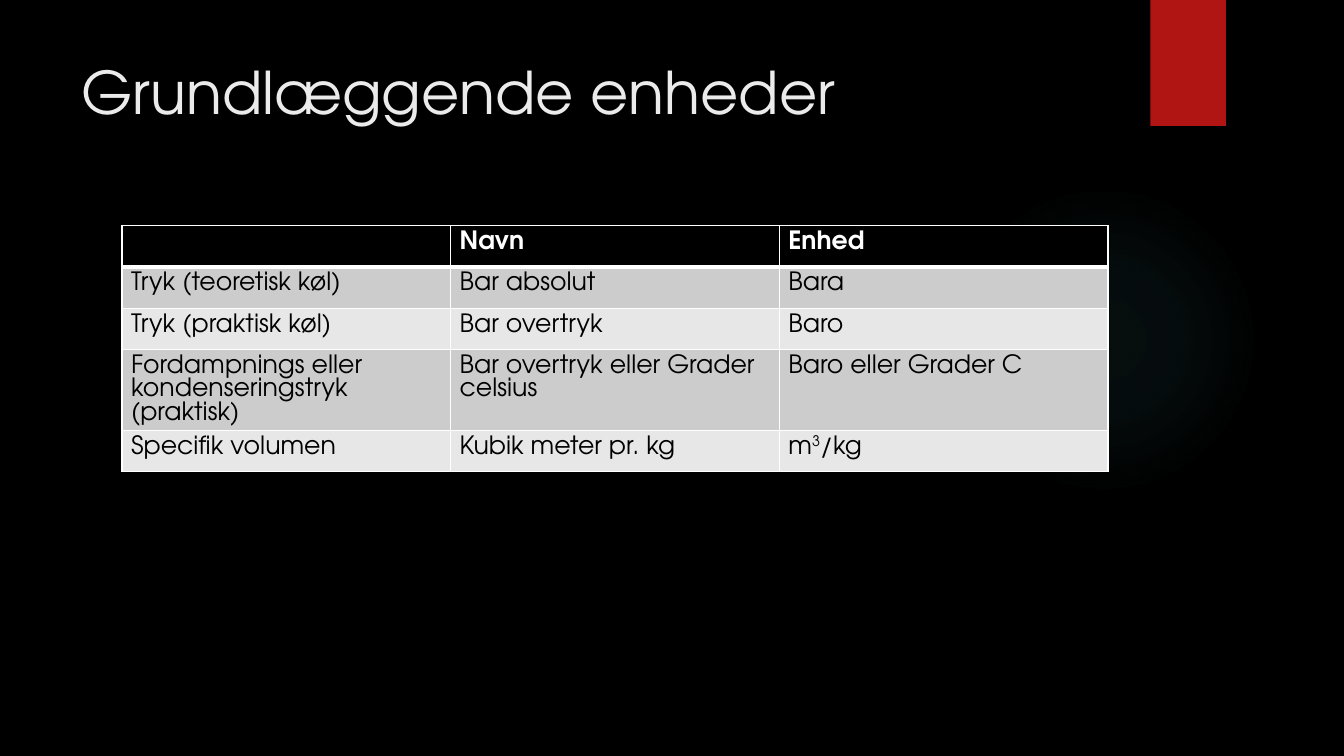
from lxml import etree
from pptx import Presentation, util as u
from pptx.dml.color import RGBColor
from pptx.enum import shapes, text
from pptx.oxml import ns, parse_xml

PX = 9144  # 100 px to the inch
FACE = "TeX Gyre Adventor"


def style(font, size, hue, bold=False):
    font.name, font.size, font.bold = FACE, u.Pt(size), bold
    font.color.rgb = RGBColor.from_string(hue)


def edge(cell, side, width):
    """Draw a white border, width in points, on one side (L, R, T or B)."""
    line = etree.SubElement(cell._tc.get_or_add_tcPr(), ns.qn(f"a:ln{side}"), w=str(u.Pt(width)))
    fill = etree.SubElement(line, ns.qn("a:solidFill"))
    etree.SubElement(fill, ns.qn("a:srgbClr"), val="FFFFFF")


deck = Presentation()
deck.slide_width, deck.slide_height = 1333 * PX, 750 * PX
slide = deck.slides.add_slide(deck.slide_layouts[5])
slide.background.fill.solid()
slide.background.fill.fore_color.rgb = RGBColor.from_string("000000")

title = slide.shapes.title
title.left, title.top, title.width, title.height = (n * PX for n in (71, 50, 1029, 153))
frame = title.text_frame
frame.text = "Grundlæggende enheder"
frame.vertical_anchor = text.MSO_ANCHOR.TOP
frame.paragraphs[0].alignment = text.PP_ALIGN.LEFT
style(frame.paragraphs[0].runs[0].font, 42, "EBEBEB")

glow = slide.shapes.add_shape(shapes.MSO_SHAPE.OVAL, *(n * PX for n in (941, 183, 308, 308)))
glow.shadow.inherit = False
glow.line.fill.background()
stops = "".join(
    f'<a:gs pos="{pos}000"><a:srgbClr val="50B9C1"><a:alpha val="{alpha}000"/></a:srgbClr></a:gs>'
    for pos, alpha in ((0, 7), (36, 6), (69, 0)))
glow._element.spPr.find(ns.qn("a:prstGeom")).addnext(parse_xml(
    f'<a:gradFill {ns.nsdecls("a")}><a:gsLst>{stops}</a:gsLst><a:path path="circle">'
    '<a:fillToRect l="50000" t="50000" r="50000" b="50000"/></a:path></a:gradFill>'))

flag = slide.shapes.add_shape(shapes.MSO_SHAPE.RECTANGLE, *(n * PX for n in (1141, 0, 75, 125)))
flag.shadow.inherit = False
flag.line.fill.background()
flag.fill.solid()
flag.fill.fore_color.rgb = RGBColor.from_string("B01513")

# Text between ^ marks is superscript
rows = [
    ("", "Navn", "Enhed"),
    ("Tryk (teoretisk køl)", "Bar absolut", "Bara"),
    ("Tryk (praktisk køl)", "Bar overtryk", "Baro"),
    ("Fordampnings eller kondenseringstryk (praktisk)", "Bar overtryk eller Grader celsius",
     "Baro eller Grader C"),
    ("Specifik volumen", "Kubik meter pr. kg", "m^3^/kg"),
]
table = slide.shapes.add_table(5, 3, *(n * PX for n in (121, 224, 978, 205))).table
for r, row in enumerate(rows):
    head = r == 0
    for c, words in enumerate(row):
        cell = table.cell(r, c)
        cell.margin_left = cell.margin_right = 9 * PX
        edge(cell, "L", 1)
        edge(cell, "R", 1)
        if head:
            edge(cell, "T", 1)
        edge(cell, "B", 3 if head else 1)
        cell.fill.solid()
        shade = "000000" if head else "CCCCCC" if r % 2 else "E7E7E7"
        cell.fill.fore_color.rgb = RGBColor.from_string(shade)
        if not words:
            continue
        para = cell.text_frame.paragraphs[0]
        for i, part in enumerate(words.split("^")):
            run = para.add_run()
            run.text = part
            style(run.font, 18, "FFFFFF" if head else "000000", head)
            if i % 2:
                run._r.get_or_add_rPr().set("baseline", "30000")

deck.save("out.pptx")
